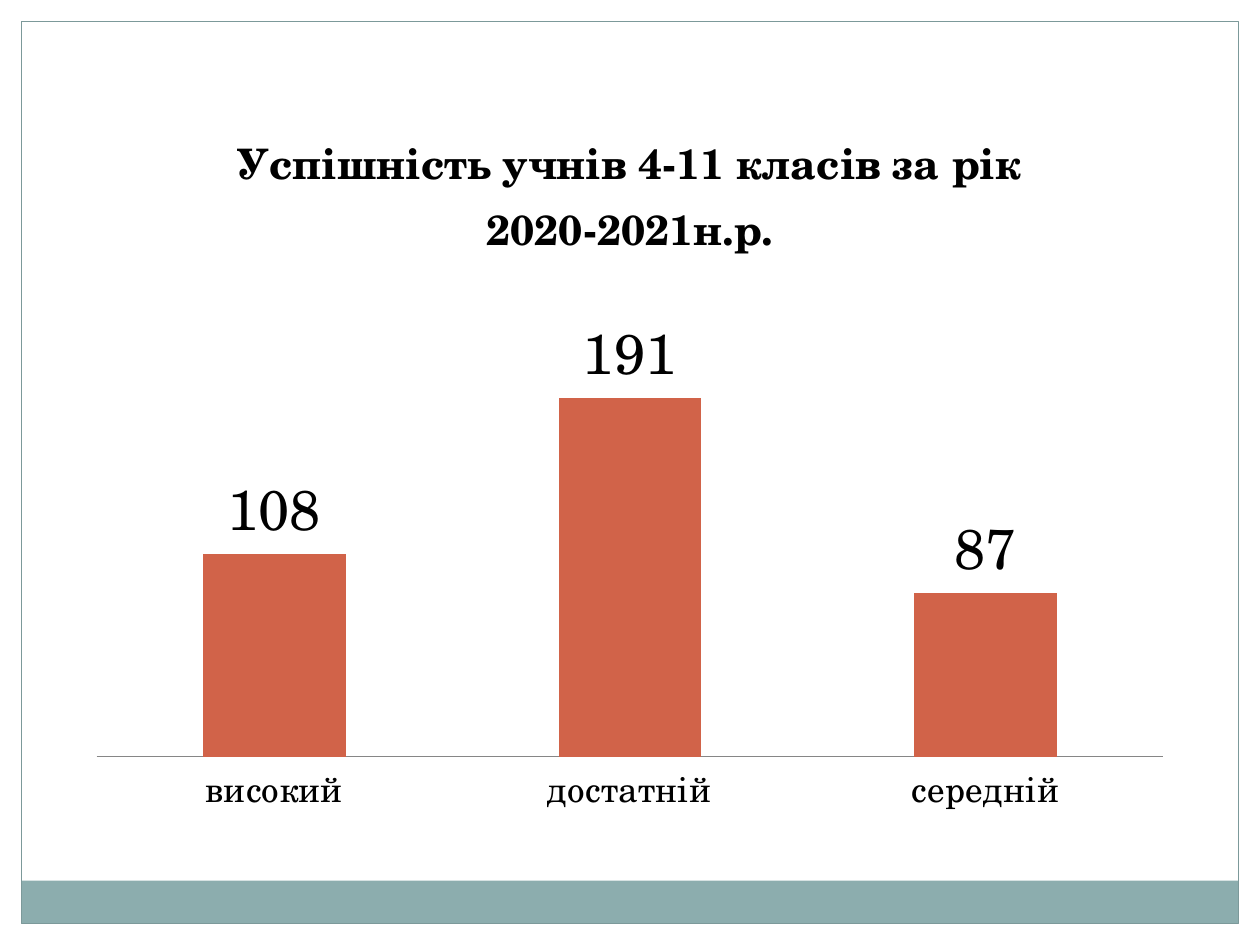
from lxml.etree import SubElement
from pptx import Presentation
from pptx.chart.data import CategoryChartData
from pptx.dml.color import RGBColor
from pptx.enum.chart import XL_CHART_TYPE, XL_LABEL_POSITION, XL_TICK_MARK
from pptx.enum.shapes import MSO_SHAPE
from pptx.oxml.ns import qn
from pptx.util import Inches, Pt

WIDTH, HEIGHT = 10, 7.5
MARGIN = 0.17
BAND_HEIGHT = 0.34
FONT = "TeX Gyre Schola"
COLORS = {
    "paper": "FFFFFF",
    "band": "8CADAE",
    "frame": "7C999A",
    "bar": "D16349",
    "axis": "868686",
    "text": "000000",
}


def color(name):
    return RGBColor.from_string(COLORS[name])


def set_font(font, size, bold=False):
    font.name = FONT
    font.size = Pt(size)
    font.bold = bold
    font.color.rgb = color("text")


def add_rectangle(slide, left, top, width, height, fill=None, line=None):
    rectangle = slide.shapes.add_shape(
        MSO_SHAPE.RECTANGLE, *map(Inches, (left, top, width, height)))
    rectangle.shadow.inherit = False
    if fill:
        rectangle.fill.solid()
        rectangle.fill.fore_color.rgb = color(fill)
    else:
        rectangle.fill.background()
    if line:
        rectangle.line.color.rgb = color(line)
        rectangle.line.width = Pt(0.75)
    else:
        rectangle.line.fill.background()


def add_border(slide):
    inner_width, inner_height = WIDTH - 2 * MARGIN, HEIGHT - 2 * MARGIN
    add_rectangle(slide, 0, 0, WIDTH, MARGIN, fill="paper")
    for left in (WIDTH - MARGIN, 0):
        add_rectangle(slide, left, 0, MARGIN, HEIGHT, fill="paper")
    add_rectangle(slide, MARGIN, HEIGHT - MARGIN - BAND_HEIGHT,
                  inner_width, BAND_HEIGHT, fill="band")
    add_rectangle(slide, MARGIN, MARGIN, inner_width, inner_height, line="frame")


def place_plot(chart, **shares):
    """Fix the inner plot area at x, y, w, h given as shares of the chart."""
    plot_area = chart.element.find(".//" + qn("c:plotArea"))
    for layout in plot_area.findall(qn("c:layout")):
        plot_area.remove(layout)
    layout = SubElement(plot_area, qn("c:layout"))
    plot_area.insert(0, layout)
    manual = SubElement(layout, qn("c:manualLayout"))
    settings = {"layoutTarget": "inner", "xMode": "edge", "yMode": "edge", **shares}
    for tag, value in settings.items():
        SubElement(manual, qn(f"c:{tag}")).set("val", str(value))


def add_results_chart(slide):
    results = CategoryChartData()
    results.categories = ["високий", "достатній", "середній"]
    results.add_series("Series 1", (108, 191, 87))
    chart = slide.shapes.add_chart(
        XL_CHART_TYPE.COLUMN_CLUSTERED,
        *map(Inches, (0.59, 0.76, 8.82, 5.83)), results).chart
    set_font(chart.font, 10)
    chart.has_legend = False

    chart.has_title = True
    title = chart.chart_title.text_frame
    title.text = "Успішність учнів 4-11 класів за рік 2020-2021н.р."
    set_font(title.paragraphs[0].font, 24, bold=True)
    chart.chart_title.include_in_layout = False

    levels = chart.category_axis
    levels.major_tick_mark = levels.minor_tick_mark = XL_TICK_MARK.NONE
    levels.format.line.color.rgb = color("axis")
    set_font(levels.tick_labels.font, 20)

    counts = chart.value_axis
    counts.minimum_scale, counts.maximum_scale = 0, 250
    counts.has_major_gridlines = False
    counts.visible = False

    bars = chart.plots[0]
    bars.gap_width, bars.overlap = 150, -25
    bars.vary_by_categories = False
    bars.series[0].format.fill.solid()
    bars.series[0].format.fill.fore_color.rgb = color("bar")
    bars.has_data_labels = True
    bars.data_labels.show_value = True
    bars.data_labels.position = XL_LABEL_POSITION.OUTSIDE_END
    set_font(bars.data_labels.font, 32)
    place_plot(chart, x=0.02, y=0.26, w=0.96, h=0.64)


def main():
    presentation = Presentation()
    presentation.slide_width = Inches(WIDTH)
    presentation.slide_height = Inches(HEIGHT)
    slide = presentation.slides.add_slide(presentation.slide_layouts[6])
    add_border(slide)
    add_results_chart(slide)
    presentation.save("out.pptx")


if __name__ == "__main__":
    main()
